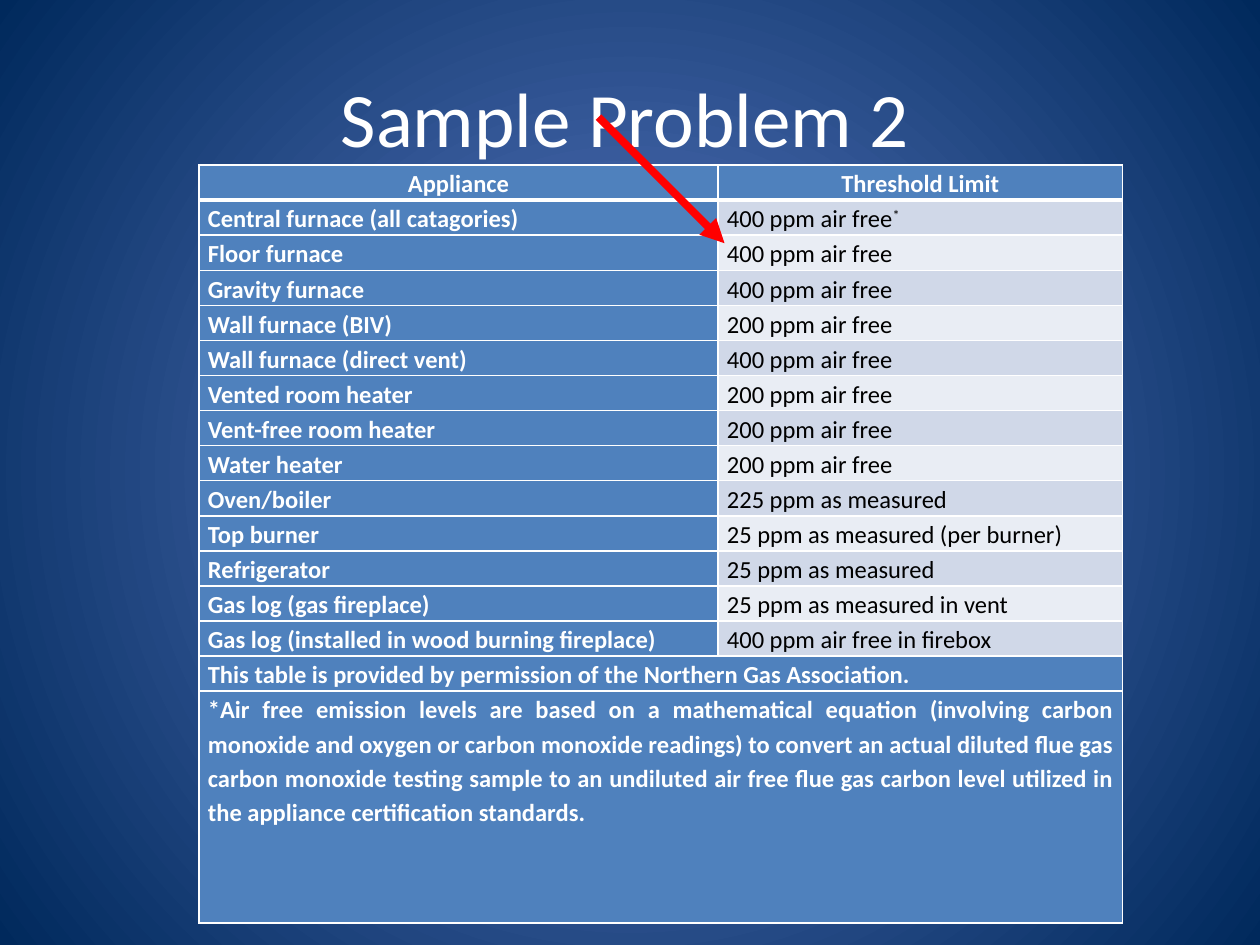
from typing import NamedTuple

from lxml import etree
from pptx import Presentation, util as u
from pptx.dml.color import RGBColor
from pptx.enum import shapes, text
from pptx.oxml import parse_xml
from pptx.oxml.ns import qn

WHITE = RGBColor(0xFF, 0xFF, 0xFF)
BLACK = RGBColor(0, 0, 0)
RED = RGBColor(0xFF, 0, 0)
BLUE = RGBColor(0x4F, 0x81, 0xBD)
BANDS = (RGBColor(0xD0, 0xD8, 0xE8), RGBColor(0xE9, 0xED, 0xF4))
GLOW = RGBColor(0x5E, 0x7C, 0xC5)
NAVY = RGBColor(0x00, 0x29, 0x5C)
FONT = "Calibri"
NS = 'xmlns:a="http://schemas.openxmlformats.org/drawingml/2006/main"'
P_NS = 'xmlns:p="http://schemas.openxmlformats.org/presentationml/2006/main"'
LEFT, MID, JUST = text.PP_ALIGN.LEFT, text.PP_ALIGN.CENTER, text.PP_ALIGN.JUSTIFY


class Limit(NamedTuple):
    name: str
    level: str
    mark: str = ""


class Look(NamedTuple):
    fill: RGBColor
    ink: RGBColor
    bold: bool
    align: text.PP_ALIGN
    after: float = 0


LIMITS = [
    Limit("Central furnace (all catagories)", "400 ppm air free", "*"),
    Limit("Floor furnace", "400 ppm air free"),
    Limit("Gravity furnace", "400 ppm air free"),
    Limit("Wall furnace (BIV)", "200 ppm air free"),
    Limit("Wall furnace (direct vent)", "400 ppm air free"),
    Limit("Vented room heater", "200 ppm air free"),
    Limit("Vent-free room heater", "200 ppm air free"),
    Limit("Water heater", "200 ppm air free"),
    Limit("Oven/boiler", "225 ppm as measured"),
    Limit("Top burner", "25 ppm as measured (per burner)"),
    Limit("Refrigerator", "25 ppm as measured"),
    Limit("Gas log (gas fireplace)", "25 ppm as measured in vent"),
    Limit("Gas log (installed in wood burning fireplace)",
          "400 ppm air free in firebox"),
]
NOTES = [
    "This table is provided by permission of the Northern Gas Association.",
    "*Air free emission levels are based on a mathematical equation "
    "(involving carbon monoxide and oxygen or carbon monoxide readings) to "
    "convert an actual diluted flue gas carbon monoxide testing sample to an "
    "undiluted air free flue gas carbon level utilized in the appliance "
    "certification standards.",
]
HEAD = Look(BLUE, WHITE, True, MID)
NAME = Look(BLUE, WHITE, True, JUST)
NOTE = Look(BLUE, WHITE, True, JUST, 5)


def add_run(para, words: str, size: float, ink: RGBColor, bold: bool = False):
    run = para.add_run()
    run.text = words
    font = run.font
    font.name, font.size, font.bold = FONT, u.Pt(size), bold
    font.color.rgb = ink
    return run


def set_glow(slide) -> None:
    """Fill the background with a round gradient, light in the middle."""
    back = parse_xml(
        f'<p:bg {P_NS} {NS}><p:bgPr><a:gradFill rotWithShape="1"><a:gsLst>'
        f'<a:gs pos="0"><a:srgbClr val="{GLOW}"/></a:gs>'
        f'<a:gs pos="100000"><a:srgbClr val="{NAVY}"/></a:gs></a:gsLst>'
        '<a:path path="circle"><a:fillToRect l="50000" t="50000" r="50000" '
        'b="50000"/></a:path></a:gradFill><a:effectLst/></p:bgPr></p:bg>')
    slide.element.cSld.insert(0, back)


def add_edges(cell, top: float, base: float) -> None:
    props = cell._tc.get_or_add_tcPr()
    for side, width in (("L", 1), ("R", 1), ("T", top), ("B", base)):
        props.append(parse_xml(
            f'<a:ln{side} {NS} w="{u.Pt(width)}"><a:solidFill>'
            f'<a:srgbClr val="{WHITE}"/></a:solidFill></a:ln{side}>'))


def fill_cell(cell, words: str, look: Look, mark: str = "") -> None:
    cell.fill.solid()
    cell.fill.fore_color.rgb = look.fill
    cell.margin_left = cell.margin_right = u.Inches(0.07)
    cell.margin_top = cell.margin_bottom = 0
    para = cell.text_frame.paragraphs[0]
    para.alignment, para.line_spacing = look.align, 1.15
    para.space_after = u.Pt(look.after)
    add_run(para, words, 14, look.ink, look.bold)
    if mark:
        run = add_run(para, mark, 14, look.ink, look.bold)
        run.font._element.set("baseline", "30000")


def add_limits(slide) -> None:
    count = 1 + len(LIMITS) + len(NOTES)
    high, last = u.Inches(6.02), u.Inches(1.84)
    table = slide.shapes.add_table(count, 2, u.Inches(1.58), u.Inches(1.31),
                                   u.Inches(7.33), high).table
    for col, width in zip(table.columns, (4.12, 3.21)):
        col.width = u.Inches(width)
    for i, row in enumerate(table.rows):
        row.height = last if i == count - 1 else (high - last) // (count - 1)
        for cell in row.cells:
            add_edges(cell, 3 if i == 1 else 1, 3 if i == 0 else 1)

    for col, words in enumerate(("Appliance", "Threshold Limit")):
        fill_cell(table.cell(0, col), words, HEAD)
    for i, limit in enumerate(LIMITS):
        level = Look(BANDS[i % 2], BLACK, False, LEFT)
        fill_cell(table.cell(i + 1, 0), limit.name, NAME)
        fill_cell(table.cell(i + 1, 1), limit.level, level, limit.mark)
    for i, words in enumerate(NOTES, 1 + len(LIMITS)):
        table.cell(i, 0).merge(table.cell(i, 1))
        fill_cell(table.cell(i, 0), words, NOTE)


def add_arrow(slide) -> None:
    arrow = slide.shapes.add_connector(
        shapes.MSO_CONNECTOR.STRAIGHT, u.Inches(4.75), u.Inches(0.93),
        u.Inches(5.75), u.Inches(1.93))
    arrow.line.color.rgb = RED
    arrow.line.width = u.Pt(4.5)
    etree.SubElement(arrow.line._get_or_add_ln(), qn("a:tailEnd"),
                     type="triangle")
    etree.SubElement(arrow._element.spPr, qn("a:effectLst"))


def main() -> None:
    deck = Presentation()
    deck.slide_width, deck.slide_height = u.Inches(10), u.Inches(7.5)
    slide = deck.slides.add_slide(deck.slide_layouts[5])
    set_glow(slide)

    title = slide.shapes.title
    title.left, title.top = u.Inches(0.17), u.Inches(0.3)
    title.width, title.height = u.Inches(9.58), u.Inches(1.25)
    title.text_frame.vertical_anchor = text.MSO_ANCHOR.MIDDLE
    para = title.text_frame.paragraphs[0]
    para.alignment = MID
    add_run(para, "Sample Problem 2", 44, WHITE)

    add_limits(slide)
    add_arrow(slide)
    deck.save("out.pptx")


if __name__ == "__main__":
    main()
